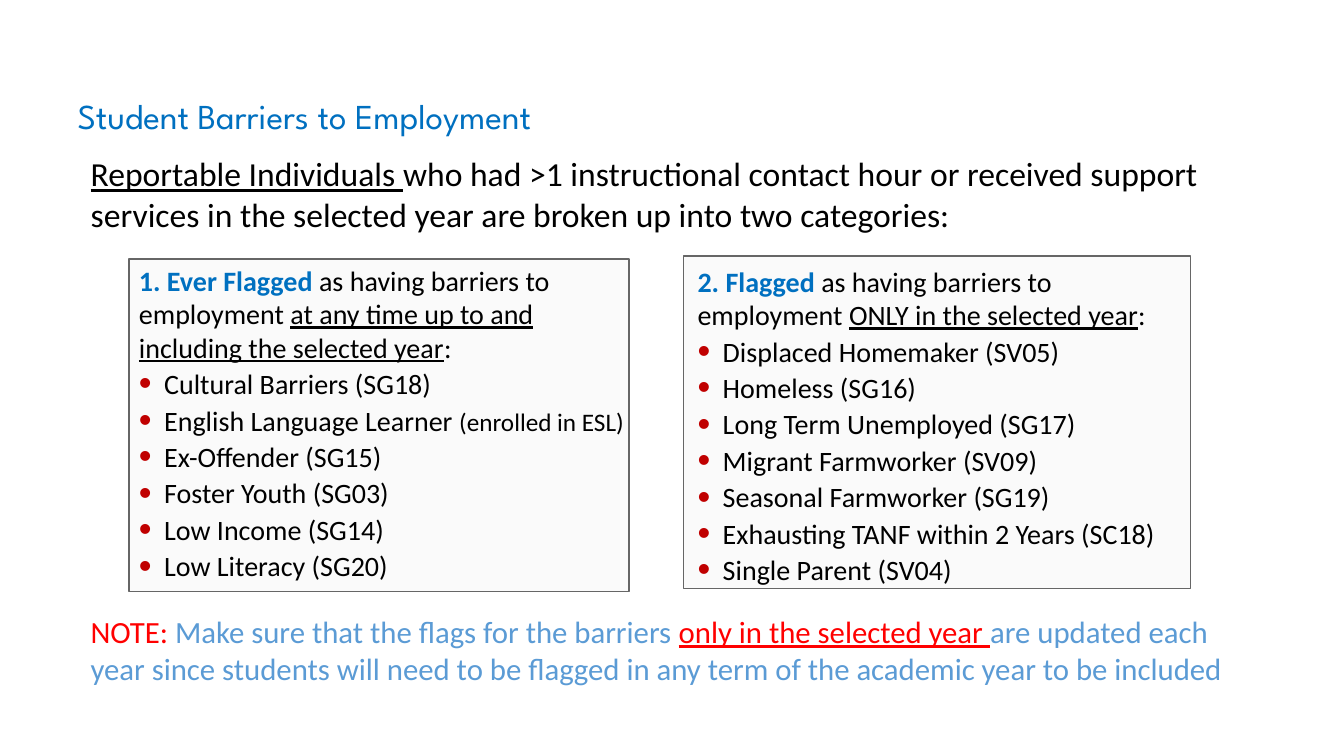
import pptx
import pptx.util
import pptx.dml.color
import pptx.enum.shapes
import pptx.enum.text
import pptx.oxml.ns
import lxml.etree

Inches = pptx.util.Inches
Pt = pptx.util.Pt

COLORS = {
    "black": "000000",
    "blue": "0070C0",
    "light_blue": "5B9BD5",
    "red": "FF0000",
    "bullet": "C00000",
    "panel": "FAFAFA",
    "border": "666666",
}


def rgb(name):
    return pptx.dml.color.RGBColor.from_string(COLORS[name])


def run(text, **style):
    return text, style


def add_bullet(paragraph, hanging, *elements):
    properties = paragraph._p.get_or_add_pPr()
    properties.set("marL", str(Inches(hanging)))
    properties.set("indent", str(-Inches(hanging)))
    for tag, attributes in elements:
        element = lxml.etree.SubElement(properties, pptx.oxml.ns.qn(tag))
        for key, value in attributes.items():
            element.set(key, value)
        if tag == "a:buClr":
            color = lxml.etree.SubElement(element, pptx.oxml.ns.qn("a:srgbClr"))
            color.set("val", COLORS["bullet"])


class SlideBuilder:
    font = "Calibri"

    def __init__(self, deck):
        self.slide = deck.slides.add_slide(deck.slide_layouts[1])

    def add_runs(self, paragraph, runs, size, font=None):
        for text, style in runs:
            part = paragraph.add_run()
            part.text = text
            part.font.name = font or self.font
            part.font.size = Pt(style.get("size", size))
            part.font.bold = style.get("bold", False)
            part.font.underline = style.get("underline", False)
            part.font.color.rgb = rgb(style.get("color", "black"))

    def place(self, shape, left, top, width, height):
        shape.left, shape.top = Inches(left), Inches(top)
        shape.width, shape.height = Inches(width), Inches(height)
        shape.text_frame.word_wrap = True
        shape.text_frame.auto_size = pptx.enum.text.MSO_AUTO_SIZE.NONE
        return shape.text_frame

    def title(self, text, bounds):
        frame = self.place(self.slide.shapes.title, *bounds)
        frame.vertical_anchor = pptx.enum.text.MSO_ANCHOR.MIDDLE
        paragraph = frame.paragraphs[0]
        paragraph.alignment = pptx.enum.text.PP_ALIGN.LEFT
        paragraph.line_spacing = 0.9
        self.add_runs(paragraph, [run(text, color="blue")], 25, "League Spartan")

    def body(self, runs, bounds):
        paragraph = self.place(self.slide.placeholders[1], *bounds).paragraphs[0]
        add_bullet(paragraph, 0, ("a:buNone", {}))
        paragraph.space_before = Pt(0)
        self.add_runs(paragraph, runs, 24)

    def text_box(self, bounds):
        box = self.slide.shapes.add_textbox(0, 0, 0, 0)
        return self.place(box, *bounds)

    def panel(self, left, top, width, height):
        panel = self.slide.shapes.add_shape(
            pptx.enum.shapes.MSO_SHAPE.RECTANGLE,
            Inches(left), Inches(top), Inches(width), Inches(height))
        panel.shadow.inherit = False
        panel.fill.solid()
        panel.fill.fore_color.rgb = rgb("panel")
        panel.line.color.rgb = rgb("border")
        panel.line.width = Pt(1)

    def category(self, number, heading, items, bounds):
        frame = self.text_box(bounds)
        lead = frame.paragraphs[0]
        add_bullet(lead, 0, ("a:buFont", {"typeface": "+mj-lt"}),
                   ("a:buAutoNum", {"type": "arabicPeriod", "startAt": str(number)}))
        self.add_runs(lead, heading, 20)
        for item in items:
            paragraph = frame.add_paragraph()
            add_bullet(paragraph, 0.25, ("a:buClr", {}),
                       ("a:buSzPct", {"val": "130000"}),
                       ("a:buFont", {"typeface": "Arial"}),
                       ("a:buChar", {"char": "•"}))
            paragraph.space_before = Pt(2)
            self.add_runs(paragraph, item, 20)


def main():
    deck = pptx.Presentation()
    deck.slide_width, deck.slide_height = Inches(13.33), Inches(7.5)
    builder = SlideBuilder(deck)

    builder.panel(6.78, 2.54, 5.03, 3.3)
    builder.panel(1.28, 2.57, 4.96, 3.3)
    builder.title("Student Barriers to Employment", (0.67, 0.88, 12.04, 0.59))
    builder.body([
        run("Reportable Individuals ", underline=True),
        run("who had >1 instructional contact hour or received support services "
            "in the selected year are broken up into two categories:"),
    ], (0.8, 1.47, 11.33, 0.71))

    note = builder.text_box((0.8, 6.03, 11.49, 0.84))
    builder.add_runs(note.paragraphs[0], [
        run("NOTE: ", color="red"),
        run("Make sure that the flags for the barriers ", color="light_blue"),
        run("only in the selected year ", color="red", underline=True),
        run("are updated each year since students will need to be flagged in any "
            "term of the academic year to be included", color="light_blue"),
    ], 22)

    ever_flagged = [
        [run("Cultural Barriers (SG18)")],
        [run("English Language Learner "), run("(enrolled in ESL)", size=18)],
        [run("Ex-Offender (SG15)")],
        [run("Foster Youth (SG03)")],
        [run("Low Income (SG14)")],
        [run("Low Literacy (SG20)")],
    ]
    flagged_this_year = [[run(text)] for text in (
        "Displaced Homemaker (SV05)",
        "Homeless (SG16)",
        "Long Term Unemployed (SG17)",
        "Migrant Farmworker (SV09)",
        "Seasonal Farmworker (SG19)",
        "Exhausting TANF within 2 Years (SC18)",
        "Single Parent (SV04)",
    )]
    categories = [
        (" Ever Flagged ", "at any time up to and including the selected year",
         ever_flagged, (1.28, 2.56, 5.14, 3.38)),
        (" Flagged ", "ONLY in the selected year",
         flagged_this_year, (6.82, 2.57, 4.96, 3.42)),
    ]
    for number, (label, period, items, bounds) in enumerate(categories, 1):
        heading = [
            run(label, color="blue", bold=True),
            run("as having barriers to employment "),
            run(period, underline=True),
            run(":"),
        ]
        builder.category(number, heading, items, bounds)

    deck.save("out.pptx")


if __name__ == "__main__":
    main()
